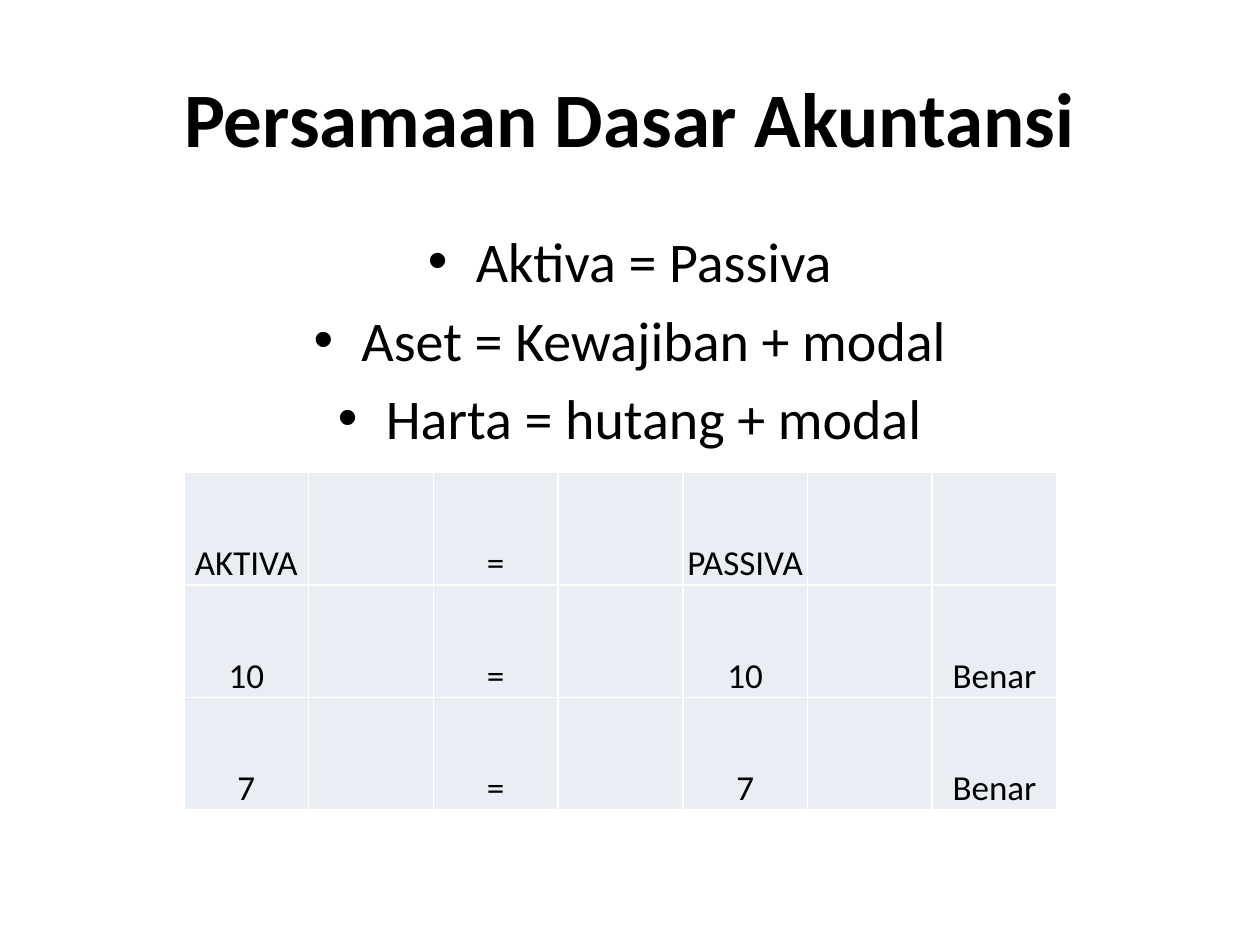
"""Build the slide on the basic accounting equation."""
import pptx
import pptx.util
import pptx.dml.color
import pptx.enum.text
import pptx.oxml.ns
from lxml import etree

Inches = pptx.util.Inches
Pt = pptx.util.Pt
RGBColor = pptx.dml.color.RGBColor
Anchor = pptx.enum.text.MSO_ANCHOR
qn = pptx.oxml.ns.qn

BLACK = RGBColor(0x00, 0x00, 0x00)
WHITE = RGBColor(0xFF, 0xFF, 0xFF)
PALE = RGBColor(0xE9, 0xED, 0xF4)


def write(frame, lines, size, bold=False, bullet=False):
    frame.word_wrap = True
    for i, line in enumerate(lines):
        para = frame.add_paragraph() if i else frame.paragraphs[0]
        para.alignment = pptx.enum.text.PP_ALIGN.CENTER
        run = para.add_run()
        run.text = line
        run.font.name = "Calibri"
        run.font.size = Pt(size)
        run.font.bold = bold
        run.font.color.rgb = BLACK
        if bullet:
            para.space_before = Pt(size * 0.2)
            props = para._p.get_or_add_pPr()
            props.set("marL", str(Inches(0.38)))
            props.set("indent", str(-Inches(0.38)))
            etree.SubElement(props, qn("a:buFont"), typeface="Arial")
            etree.SubElement(props, qn("a:buChar"), char="•")


def edge(cell):
    props = cell._tc.get_or_add_tcPr()
    for side in ("lnL", "lnR", "lnT", "lnB"):
        line = etree.SubElement(props, qn("a:" + side), w=str(Pt(1)))
        fill = etree.SubElement(line, qn("a:solidFill"))
        etree.SubElement(fill, qn("a:srgbClr"), val=str(WHITE))


deck = pptx.Presentation()
deck.slide_width = Inches(10)
deck.slide_height = Inches(7.5)
slide = deck.slides.add_slide(deck.slide_layouts[6])

title = slide.shapes.add_textbox(Inches(0.5), Inches(0.3), Inches(9), Inches(1.25))
title.text_frame.vertical_anchor = Anchor.MIDDLE
write(title.text_frame, ["Persamaan Dasar Akuntansi"], size=44, bold=True)

body = slide.shapes.add_textbox(Inches(0.5), Inches(1.75), Inches(9), Inches(1.92))
rules = ["Aktiva = Passiva", "Aset = Kewajiban + modal", "Harta = hutang + modal"]
write(body.text_frame, rules, size=32, bullet=True)

rows = [
    ["AKTIVA", "", "=", "", "PASSIVA", "", ""],
    ["10", "", "=", "", "10", "", "Benar"],
    ["7", "", "=", "", "7", "", "Benar"],
]
table = slide.shapes.add_table(
    3, 7, Inches(1.46), Inches(3.75), Inches(6.93), Inches(2.68)).table
table.first_row = False
table.horz_banding = False
for col in table.columns:
    col.width = Inches(0.99)
for r, row in enumerate(rows):
    table.rows[r].height = Inches(2.68 / 3)
    for c, text in enumerate(row):
        cell = table.cell(r, c)
        edge(cell)
        cell.fill.solid()
        cell.fill.fore_color.rgb = PALE
        if text:
            cell.vertical_anchor = Anchor.BOTTOM
            cell.margin_left = cell.margin_right = cell.margin_top = Inches(0.01)
            cell.margin_bottom = 0
            write(cell.text_frame, [text], size=20)

deck.save("out.pptx")
